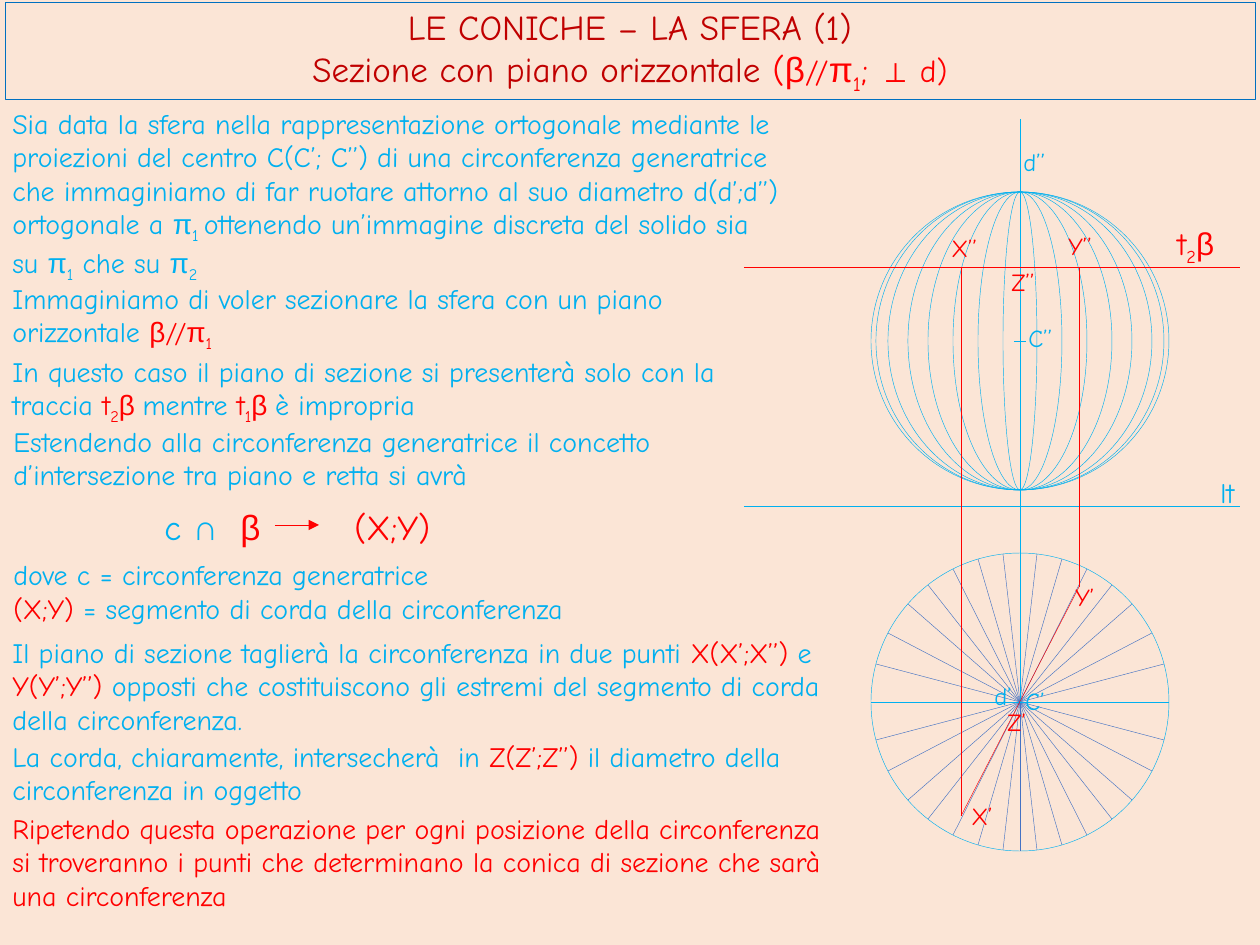
import math

import lxml.etree
import pptx
import pptx.dml.color
import pptx.enum.shapes
import pptx.enum.text
import pptx.oxml.ns
import pptx.util

PX = 914400 / 126
COLOURS = {
    "paper": "FBE5D6",
    "border": "0070C0",
    "title": "C00000",
    "red": "FF0000",
    "sky": "00B0F0",
    "ray": "4472C4",
}
HAIRLINE = pptx.util.Pt(0.25)
RED = {"colour": "red"}
GREEK = {"font": "Arial"}
RED_GREEK = RED | GREEK
SUB = {"baseline": -25000}
RED_SUB = RED | SUB

AXIS = 1020
RADIUS = 149
ELEVATION = 341
PLAN = 702
TRACE = 267
CHORD_X, CHORD_Y = (961, 816), (1079, 587)
MERIDIAN_HALF_WIDTHS = [17, 42, 67, 92, 112, 132, 144]

PASSAGES = [
    ((0, 100, 795, 183), [
        ("Sia data la sfera nella rappresentazione ortogonale mediante le proiezioni del centro "
         "C(C’; C’’) di una circonferenza generatrice che immaginiamo di far ruotare attorno al "
         "suo diametro d(d’;d’’) ortogonale a ", {}),
        ("π", GREEK), ("1 ", SUB),
        ("ottenendo un’immagine discreta del solido sia su ", {}),
        ("π", GREEK), ("1", SUB), (" che su ", {}), ("π", GREEK), ("2", SUB)]),
    ((0, 275, 784, 81), [
        ("Immaginiamo di voler sezionare la sfera con un piano orizzontale ", {}),
        ("β", RED_GREEK), ("//", RED), ("π", RED_GREEK), ("1", RED_SUB)]),
    ((0, 348, 779, 81), [
        ("In questo caso il piano di sezione si presenterà solo con la traccia ", {}),
        ("t", RED), ("2", RED_SUB), ("β ", RED_GREEK), ("mentre ", {}),
        ("t", RED), ("1", RED_SUB), ("β ", RED_GREEK), ("è impropria", {})]),
    ((0, 629, 854, 115), [
        ("Il piano di sezione taglierà la circonferenza in due punti ", {}),
        ("X(X’;X’’) ", RED), ("e ", {}), ("Y(Y’;Y’’)", RED),
        (" opposti che costituiscono gli estremi del segmento di corda della circonferenza.", {})]),
    ((0, 733, 815, 81), [
        ("La corda, chiaramente, intersecherà  in ", {}), ("Z(Z’;Z’’) ", RED),
        ("il diametro della circonferenza in oggetto", {})]),
    ((0, 805, 853, 115), [
        ("Ripetendo questa operazione per ogni posizione della circonferenza si troveranno i punti "
         "che determinano la conica di sezione che sarà una circonferenza", RED)]),
]

POINT_LABELS = [
    ("C’’", 1016, 317, "sky"),
    ("C’", 1013, 680, "sky"),
    ("d’’", 1011, 141, "sky"),
    ("d’", 982, 675, "sky"),
    ("X’’", 939, 227, "red"),
    ("X’", 959, 795, "red"),
    ("Y’’", 1056, 225, "red"),
    ("Y’", 1063, 576, "red"),
    ("Z’’", 999, 261, "red"),
    ("Z’", 995, 701, "red"),
]


def px(length):
    return pptx.util.Emu(round(length * PX))


def rgb(name):
    return pptx.dml.color.RGBColor.from_string(COLOURS[name])


def add_run(paragraph, text, size=16, colour="sky", font="Comic Neue", baseline=0, bold=False):
    run = paragraph.add_run()
    run.text = text
    run.font.size = pptx.util.Pt(size)
    run.font.name = font
    run.font.bold = bold
    run.font.color.rgb = rgb(colour)
    if baseline:
        run.font._element.set("baseline", str(baseline))


def write(frame, paragraphs, align=pptx.enum.text.PP_ALIGN.LEFT, **base):
    frame.word_wrap = True
    frame.auto_size = pptx.enum.text.MSO_AUTO_SIZE.SHAPE_TO_FIT_TEXT
    for index, spans in enumerate(paragraphs):
        paragraph = frame.add_paragraph() if index else frame.paragraphs[0]
        paragraph.alignment = align
        for text, style in spans:
            add_run(paragraph, text, **(base | style))


def add_text(slide, box, paragraphs, **base):
    frame = slide.shapes.add_textbox(*map(px, box)).text_frame
    write(frame, paragraphs, **base)
    return frame


def add_outline(slide, preset, box, colour, fill=None):
    outline = slide.shapes.add_shape(preset, *map(px, box))
    outline.shadow.inherit = False
    if fill:
        outline.fill.solid()
        outline.fill.fore_color.rgb = rgb(fill)
    else:
        outline.fill.background()
    outline.line.color.rgb = rgb(colour)
    outline.line.width = HAIRLINE
    return outline


def add_ellipse(slide, centre_y, half_width):
    box = (AXIS - half_width, centre_y - RADIUS, 2 * half_width, 2 * RADIUS)
    add_outline(slide, pptx.enum.shapes.MSO_SHAPE.OVAL, box, "sky")


def add_line(slide, start, end, colour, arrow=False):
    line = slide.shapes.add_connector(
        pptx.enum.shapes.MSO_CONNECTOR.STRAIGHT, *map(px, (*start, *end)))
    line.line.color.rgb = rgb(colour)
    line.line.width = HAIRLINE
    if arrow:
        lxml.etree.SubElement(
            line.line._get_or_add_ln(), pptx.oxml.ns.qn("a:tailEnd"), type="triangle")
    lxml.etree.SubElement(line._element.spPr, pptx.oxml.ns.qn("a:effectLst"))


def add_title(slide):
    banner = add_outline(slide, pptx.enum.shapes.MSO_SHAPE.RECTANGLE,
                         (5, 2, 1250, 97), "border", fill="paper")
    write(banner.text_frame, [
        [("LE CONICHE – LA SFERA (1)", {})],
        [("Sezione con piano orizzontale ", {}), ("(", RED), ("β", RED_GREEK),
         ("//", RED | {"size": 18}), ("π", RED_GREEK), ("1", RED_SUB), ("; ", RED),
         ("⊥ ", RED_GREEK | {"size": 18, "bold": True}), ("d)", RED | {"size": 18})],
    ], align=pptx.enum.text.PP_ALIGN.CENTER, size=20, colour="title")


def add_sphere(slide):
    for half_width in [*MERIDIAN_HALF_WIDTHS, RADIUS]:
        add_ellipse(slide, ELEVATION, half_width)
    add_ellipse(slide, PLAN, RADIUS)
    for across in MERIDIAN_HALF_WIDTHS:
        down = round(math.sqrt(RADIUS ** 2 - across ** 2))
        for side in (across, -across):
            add_line(slide, (AXIS - side, PLAN + down), (AXIS + side, PLAN - down), "ray")
    add_line(slide, (AXIS - RADIUS, PLAN), (AXIS + RADIUS, PLAN), "sky")
    add_line(slide, (AXIS, PLAN - RADIUS), (AXIS, PLAN + RADIUS), "ray")
    add_line(slide, (AXIS, ELEVATION), (AXIS, PLAN), "sky")
    add_line(slide, (AXIS, ELEVATION - RADIUS), (AXIS, ELEVATION + RADIUS), "ray")
    add_line(slide, (AXIS, 119), (AXIS, ELEVATION + RADIUS), "sky")
    for centre_y in (ELEVATION, PLAN):
        add_line(slide, (AXIS - 6, centre_y), (AXIS + 6, centre_y), "sky")


def add_section(slide):
    for y, colour in ((506, "sky"), (TRACE, "red")):
        add_line(slide, (744, y), (1240, y), colour)
    for point in (CHORD_X, CHORD_Y):
        add_line(slide, (point[0], TRACE), point, "red")
    add_line(slide, CHORD_X, CHORD_Y, "red")
    for label, left, top, colour in POINT_LABELS:
        add_text(slide, (left, top, 66, 43), [[(label, {})]], size=14, colour=colour)
    add_text(slide, (1208, 469, 50, 47), [[("lt", {})]])
    add_text(slide, (1165, 218, 71, 50),
             [[("t", {}), ("2", SUB), ("β", GREEK)]], size=18, colour="red")


def add_intersection(slide):
    definition = add_text(slide, (1, 418, 769, 285), [
        [("Estendendo alla circonferenza generatrice il concetto d’intersezione "
          "tra piano e retta si avrà", {})],
        [("dove c = circonferenza generatrice", {})],
        [("(X;Y) ", RED), ("= segmento di corda della circonferenza", {})]])
    definition.paragraphs[1].space_before = pptx.util.Pt(38)
    formula = add_text(slide, (152, 499, 292, 44), [
        [("c ", {}), ("∩\t", GREEK), ("β\t", RED_GREEK), ("(X;Y)", RED)]], size=20)
    tabs = lxml.etree.SubElement(
        formula.paragraphs[0]._p.get_or_add_pPr(), pptx.oxml.ns.qn("a:tabLst"))
    for position in (76, 190):
        lxml.etree.SubElement(tabs, pptx.oxml.ns.qn("a:tab"), pos=str(px(position)), algn="l")
    add_line(slide, (275, 525), (319, 525), "red", arrow=True)


def main():
    deck = pptx.Presentation()
    deck.slide_width, deck.slide_height = px(1260), px(945)
    slide = deck.slides.add_slide(deck.slide_layouts[6])
    slide.background.fill.solid()
    slide.background.fill.fore_color.rgb = rgb("paper")
    add_title(slide)
    add_sphere(slide)
    add_section(slide)
    for box, spans in PASSAGES:
        add_text(slide, box, [spans])
    add_intersection(slide)
    deck.save("out.pptx")


if __name__ == "__main__":
    main()
